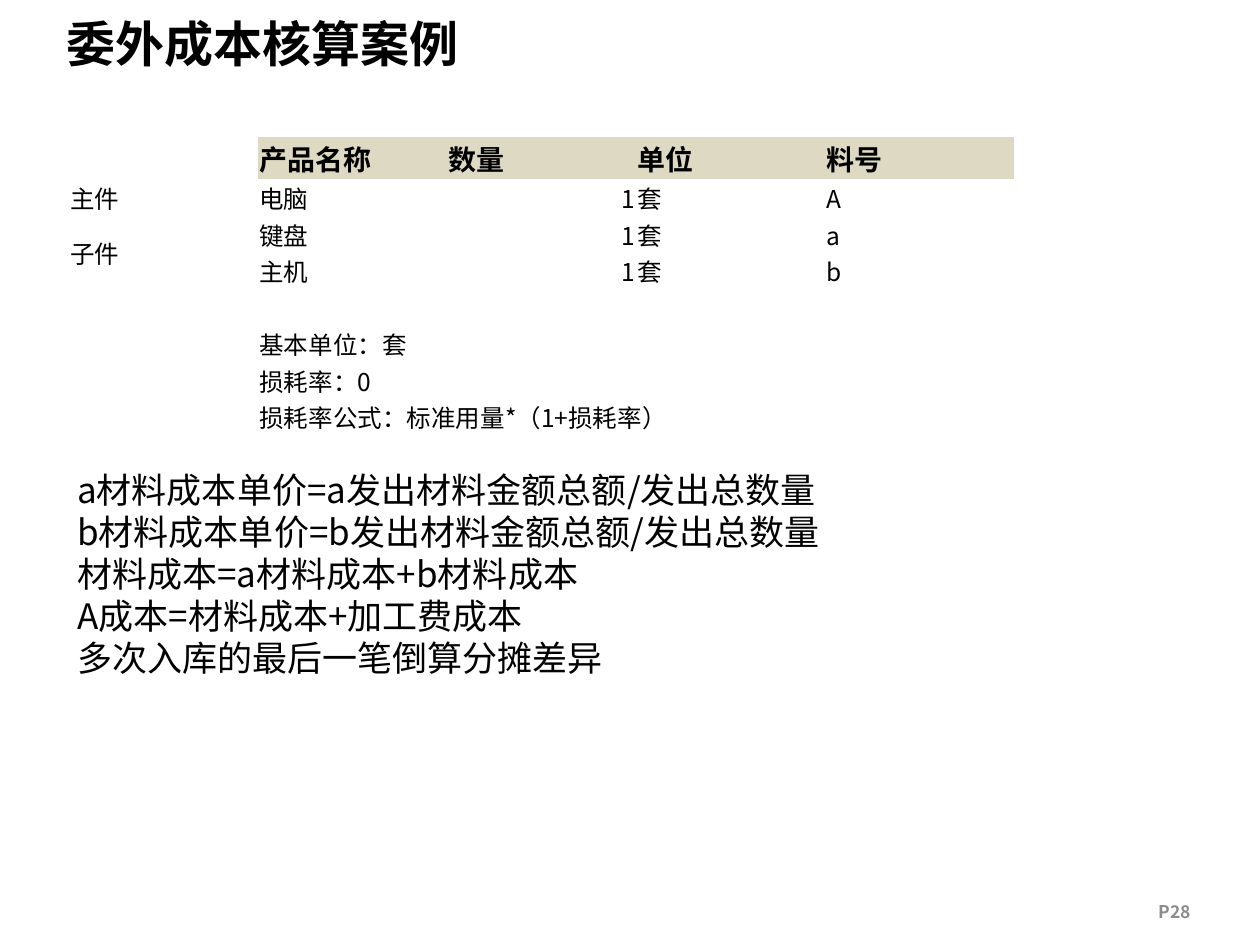
from lxml.etree import SubElement
from pptx import Presentation
from pptx.dml.color import RGBColor
from pptx.enum.text import MSO_ANCHOR as Anchor, MSO_AUTO_SIZE as AutoSize, PP_ALIGN as Align
from pptx.oxml.ns import qn
from pptx.util import Cm, Pt

FONT = "Noto Sans CJK SC"
COLORS = {"text": "000000", "header": "DDD9C3", "page": "8C8C8C"}
BORDERS = ("a:lnL", "a:lnR", "a:lnT", "a:lnB")


def add_run(paragraph, text, size, bold=False, color="text"):
    run = paragraph.add_run()
    run.text = text
    run.font.size, run.font.bold, run.font.name = Pt(size), bold, FONT
    run.font.color.rgb = RGBColor.from_string(COLORS[color])
    SubElement(run.font._element, qn("a:ea"), typeface=FONT)


def place(shape, left, top, width, height):
    shape.left, shape.top, shape.width, shape.height = map(Cm, (left, top, width, height))


prs = Presentation()
prs.slide_width, prs.slide_height = Cm(25.4), Cm(19.05)
slide = prs.slides.add_slide(prs.slide_layouts[1])

# Title
title = slide.shapes.title
place(title, 1.09, 0, 18.16, 1.73)
title.text_frame.vertical_anchor = Anchor.MIDDLE
title.text_frame.auto_size = AutoSize.NONE
heading = title.text_frame.paragraphs[0]
heading.alignment = Align.LEFT
add_run(heading, "委外成本核算案例", 28, bold=True)

# Bill of materials
rows = [
    ["", "产品名称", "数量", "单位", "料号"],
    ["主件", "电脑", "1", "套", "A"],
    ["子件", "键盘", "1", "套", "a"],
    ["", "主机", "1", "套", "b"],
    [""] * 5,
    ["", "基本单位：套", "", "", ""],
    ["", "损耗率：0", "", "", ""],
    ["", "损耗率公式：标准用量*（1+损耗率）", "", "", ""],
]
ROW_HEIGHT = 0.72
bom = slide.shapes.add_table(len(rows), 5, Cm(1.4), Cm(2.77),
                             Cm(19.05), Cm(ROW_HEIGHT * len(rows))).table
bom.first_row = bom.horz_banding = False
for column in bom.columns:
    column.width = Cm(3.81)
for r, row in enumerate(rows):
    bom.rows[r].height = Cm(ROW_HEIGHT)
    for c, text in enumerate(row):
        cell = bom.cell(r, c)
        cell.margin_left = cell.margin_right = cell.margin_top = Cm(0.02)
        cell.margin_bottom = 0
        cell.vertical_anchor = Anchor.MIDDLE
        is_header = r == 0 and c > 0
        if is_header:
            cell.fill.solid()
            cell.fill.fore_color.rgb = RGBColor.from_string(COLORS["header"])
        else:
            cell.fill.background()
        # No visible grid
        props = cell._tc.tcPr
        for position, side in enumerate(BORDERS):
            border = props.makeelement(qn(side), {"w": "0"})
            SubElement(border, qn("a:noFill"))
            props.insert(position, border)
        line = cell.text_frame.paragraphs[0]
        if text:
            line.alignment = Align.RIGHT if text == "1" else Align.LEFT
            add_run(line, text, 16 if is_header else 14, bold=is_header)
        else:
            SubElement(line._p, qn("a:endParaRPr"), sz="1000")
for first, last in [((2, 0), (3, 0)), ((5, 1), (5, 2)), ((6, 1), (6, 2)), ((7, 1), (7, 4))]:
    bom.cell(*first).merge(bom.cell(*last))

# Cost formulas
formulas = slide.placeholders[1]
place(formulas, 1.3, 9.32, 23.39, 6.93)
frame = formulas.text_frame
frame.auto_size = AutoSize.NONE
for i, text in enumerate([
    "a材料成本单价=a发出材料金额总额/发出总数量",
    "b材料成本单价=b发出材料金额总额/发出总数量",
    "材料成本=a材料成本+b材料成本",
    "A成本=材料成本+加工费成本",
    "多次入库的最后一笔倒算分摊差异",
]):
    formula = frame.paragraphs[0] if i == 0 else frame.add_paragraph()
    formula.line_spacing, formula.space_before = Pt(24), Pt(0)
    props = formula._p.get_or_add_pPr()
    props.set("marL", str(Cm(0.97)))
    props.set("indent", str(-Cm(0.97)))
    SubElement(props, qn("a:buNone"))
    add_run(formula, text, 20)

# Page number
page = slide.shapes.add_textbox(Cm(23.11), Cm(18.03), Cm(2.29), Cm(0.69))
page.text_frame.word_wrap = True
add_run(page.text_frame.paragraphs[0], "P28", 10, bold=True, color="page")

prs.save("out.pptx")
